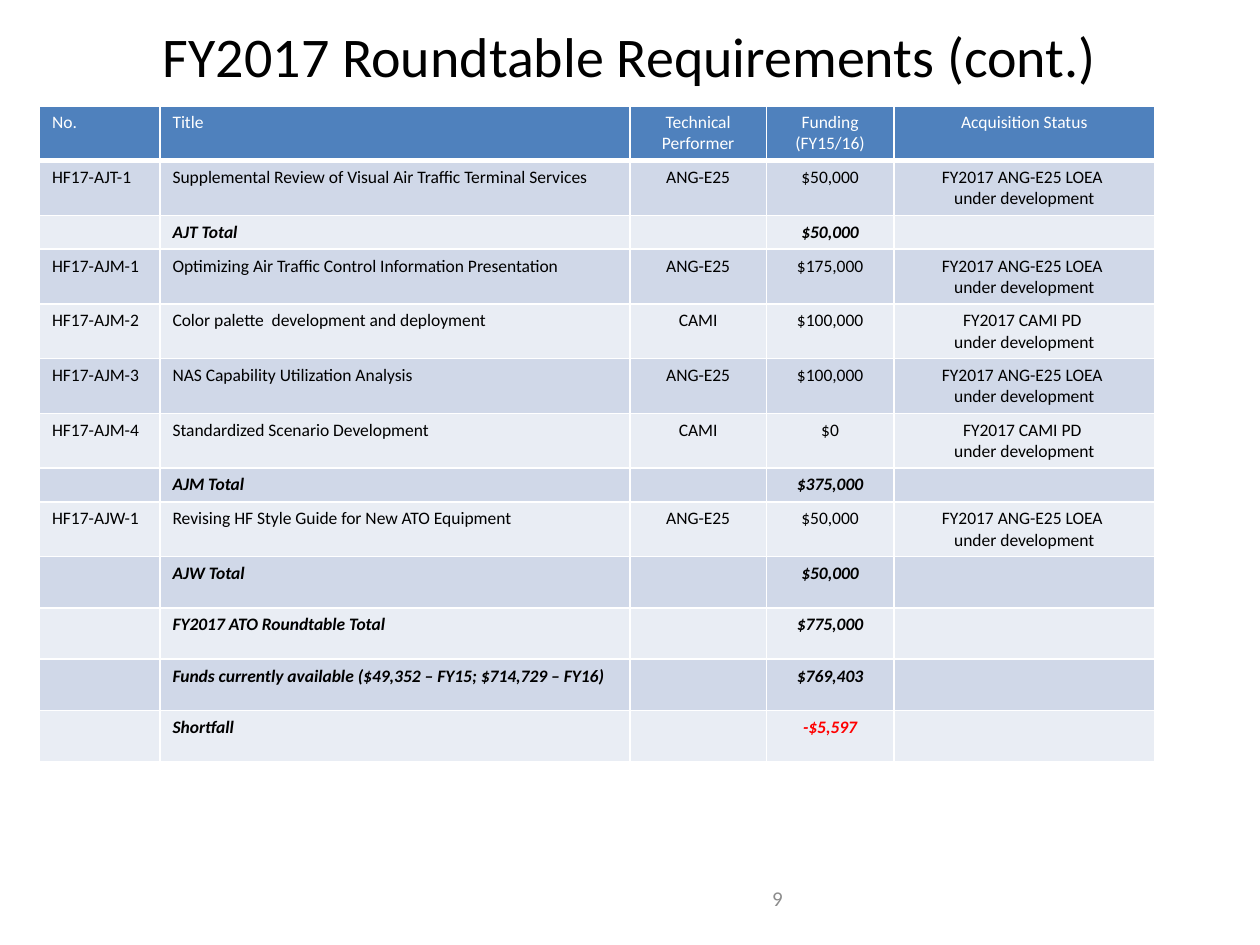
from lxml.etree import SubElement
from pptx import Presentation
from pptx.dml.color import RGBColor
from pptx.enum.text import MSO_ANCHOR, PP_ALIGN
from pptx.oxml.ns import qn
from pptx.util import Pt


def style(p, size, color, align, bold=False):
    p.alignment = align
    for r in p.runs:
        r.font.name = "Calibri"
        r.font.size = Pt(size)
        r.font.color.rgb = RGBColor.from_string(color)
        r.font.bold = r.font.italic = bold
    if not p.runs:  # an empty cell still sets its row's height
        SubElement(p._p, qn("a:endParaRPr"), sz=str(size * 100))


def set_borders(cell, bottom):
    tcPr = cell._tc.get_or_add_tcPr()
    for i, (side, width) in enumerate(
            [("lnL", 1), ("lnR", 1), ("lnT", 1), ("lnB", bottom)]):
        ln = SubElement(tcPr, qn("a:" + side), w=str(Pt(width)))
        fill = SubElement(ln, qn("a:solidFill"))
        SubElement(fill, qn("a:srgbClr"), val="FFFFFF")
        tcPr.insert(i, ln)  # borders come before the cell fill


prs = Presentation()
prs.slide_width, prs.slide_height = Pt(720), Pt(540)
s = prs.slides.add_slide(prs.slide_layouts[6])

# Title and page number
for text, box, size, color, align in [
    ("FY2017 Roundtable Requirements (cont.)", (36, -13.7, 648, 90),
     32, "000000", PP_ALIGN.CENTER),
    ("9", (286.6, 504, 167.8, 18.7), 12, "8C8C8C", PP_ALIGN.RIGHT),
]:
    tf = s.shapes.add_textbox(*map(Pt, box)).text_frame
    tf.word_wrap = True
    tf.vertical_anchor = MSO_ANCHOR.MIDDLE
    p = tf.paragraphs[0]
    p.text = text
    style(p, size, color, align)

# Table content
loea = "FY2017 ANG-E25 LOEA \nunder development"
cami_pd = "FY2017 CAMI PD \nunder development"
rows = [
    ("No.", "Title", "Technical Performer", "Funding\n(FY15/16)", "Acquisition Status"),
    ("HF17-AJT-1", "Supplemental Review of Visual Air Traffic Terminal Services",
     "ANG-E25", "$50,000", loea),
    ("", "AJT Total", "", "$50,000", ""),
    ("HF17-AJM-1", "Optimizing Air Traffic Control Information Presentation",
     "ANG-E25", "$175,000", loea),
    ("HF17-AJM-2", "Color palette  development and deployment",
     "CAMI", "$100,000", cami_pd),
    ("HF17-AJM-3", "NAS Capability Utilization Analysis",
     "ANG-E25", "$100,000", loea),
    ("HF17-AJM-4", "Standardized Scenario Development", "CAMI", "$0", cami_pd),
    ("", "AJM Total", "", "$375,000", ""),
    ("HF17-AJW-1", "Revising HF Style Guide for New ATO Equipment",
     "ANG-E25", "$50,000", loea),
    ("", "AJW Total", "", "$50,000", ""),
    ("", "FY2017 ATO Roundtable Total", "", "$775,000", ""),
    ("", "Funds currently available ($49,352 – FY15; $714,729 – FY16)",
     "", "$769,403", ""),
    ("", "Shortfall", "", "-$5,597", ""),
]
widths = [68.8, 268.6, 77.9, 72.9, 149]
short_rows = (2, 7)

# Table
table = s.shapes.add_table(len(rows), len(widths), Pt(22.6), Pt(60.5),
                           Pt(sum(widths)), Pt(373.7)).table
for column, width in zip(table.columns, widths):
    column.width = Pt(width)

for i, row in enumerate(rows):
    table.rows[i].height = Pt(19.4 if i in short_rows else 29.3)
    is_header = i == 0
    is_total = not row[0]
    fill = "4F81BD" if is_header else "D0D8E8" if i % 2 else "E9EDF4"
    for j, text in enumerate(row):
        cell = table.cell(i, j)
        cell.fill.solid()
        cell.fill.fore_color.rgb = RGBColor.from_string(fill)
        set_borders(cell, bottom=3 if is_header else 1)
        color = ("FFFFFF" if is_header else
                 "FF0000" if text.startswith("-") else "000000")
        p = cell.text_frame.paragraphs[0]
        p.text = text
        style(p, 10, color, PP_ALIGN.LEFT if j < 2 else PP_ALIGN.CENTER, is_total)

prs.save("out.pptx")
